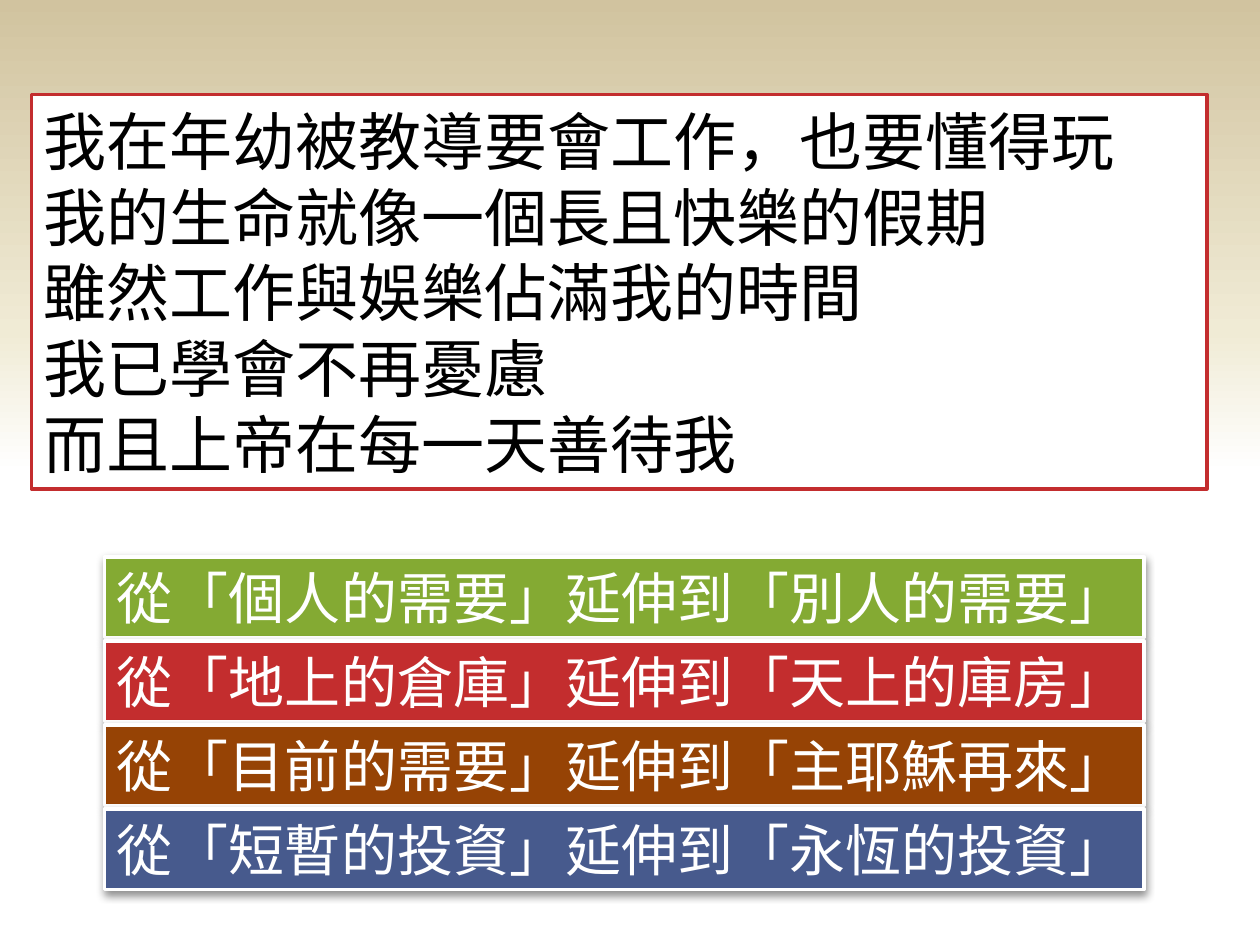
from copy import deepcopy

from lxml.etree import SubElement
from pptx import Presentation
from pptx.dml.color import RGBColor
from pptx.enum.shapes import MSO_SHAPE
from pptx.enum.text import MSO_ANCHOR, MSO_AUTO_SIZE, PP_ALIGN
from pptx.oxml.ns import qn
from pptx.util import Inches, Pt

FONT = "Arial"
BACKGROUND_STOPS = [(0.5, "FFFFFF"), (0.65, "F0EBD5"), (1, "D1C39F")]
POEM = [
    "我在年幼被教導要會工作，也要懂得玩",
    "我的生命就像一個長且快樂的假期",
    "雖然工作與娛樂佔滿我的時間",
    "我已學會不再憂慮",
    "而且上帝在每一天善待我",
]
EXTENSIONS = [
    ("個人的需要", "別人的需要", "84AA33"),
    ("地上的倉庫", "天上的庫房", "C32D2E"),
    ("目前的需要", "主耶穌再來", "964305"),
    ("短暫的投資", "永恆的投資", "475A8D"),
]
BAR_LEFT, BAR_TOP, BAR_WIDTH, BAR_HEIGHT = 0.83, 4.42, 8.25, 0.64
BAR_PITCH = 2 / 3


def color(value):
    """Turn a hex string into a colour."""
    return RGBColor.from_string(value)


def paint_background(page):
    """Fill the page with a gradient that rises from white to sand."""
    fill = page.background.fill
    fill.gradient()
    fill.gradient_angle = 90
    stop_list = page.element.find(".//" + qn("a:gsLst"))
    stop_list.append(deepcopy(stop_list[0]))
    for stop, (position, value) in zip(fill.gradient_stops, BACKGROUND_STOPS):
        stop.position = position
        stop.color.rgb = color(value)


def add_box(page, bounds, lines, size, ink, fill, border, anchor):
    """Add a bordered rectangle with one left-aligned paragraph per line."""
    box = page.shapes.add_shape(MSO_SHAPE.RECTANGLE, *map(Inches, bounds))
    box.shadow.inherit = False
    box.fill.solid()
    box.fill.fore_color.rgb = color(fill)
    box.line.color.rgb = color(border)
    box.line.width = Pt(2)
    frame = box.text_frame
    frame.word_wrap = True
    frame.auto_size = MSO_AUTO_SIZE.SHAPE_TO_FIT_TEXT
    frame.vertical_anchor = anchor
    frame.text = "\n".join(lines)
    for para in frame.paragraphs:
        para.alignment = PP_ALIGN.LEFT
        para.font.name = FONT
        para.font.size = Pt(size)
        para.font.color.rgb = color(ink)
    return box


def drop_shadow(box):
    """Give a box a soft shadow straight below it."""
    effects = box.element.spPr.find(qn("a:effectLst"))
    shadow = SubElement(
        effects, qn("a:outerShdw"), blurRad=str(Pt(5)), dist=str(Pt(2)),
        dir="5400000", rotWithShape="0",
    )
    shade = SubElement(shadow, qn("a:srgbClr"), val="000000")
    SubElement(shade, qn("a:alpha"), val="43000")


def main():
    """Build the slide and save it."""
    deck = Presentation()
    deck.slide_width, deck.slide_height = Inches(10), Inches(7.5)
    page = deck.slides.add_slide(deck.slide_layouts[6])
    paint_background(page)
    add_box(page, (0.25, 0.75, 9.33, 3.13), POEM, 36, "000000",
            "FFFFFF", "C32D2E", MSO_ANCHOR.MIDDLE)
    for row, (start, goal, fill) in enumerate(EXTENSIONS):
        bounds = (BAR_LEFT, BAR_TOP + row * BAR_PITCH, BAR_WIDTH, BAR_HEIGHT)
        bar = add_box(page, bounds, [f"從「{start}」延伸到「{goal}」"], 32,
                      "FFFFFF", fill, "FFFFFF", MSO_ANCHOR.TOP)
        drop_shadow(bar)
    deck.save("out.pptx")


if __name__ == "__main__":
    main()
